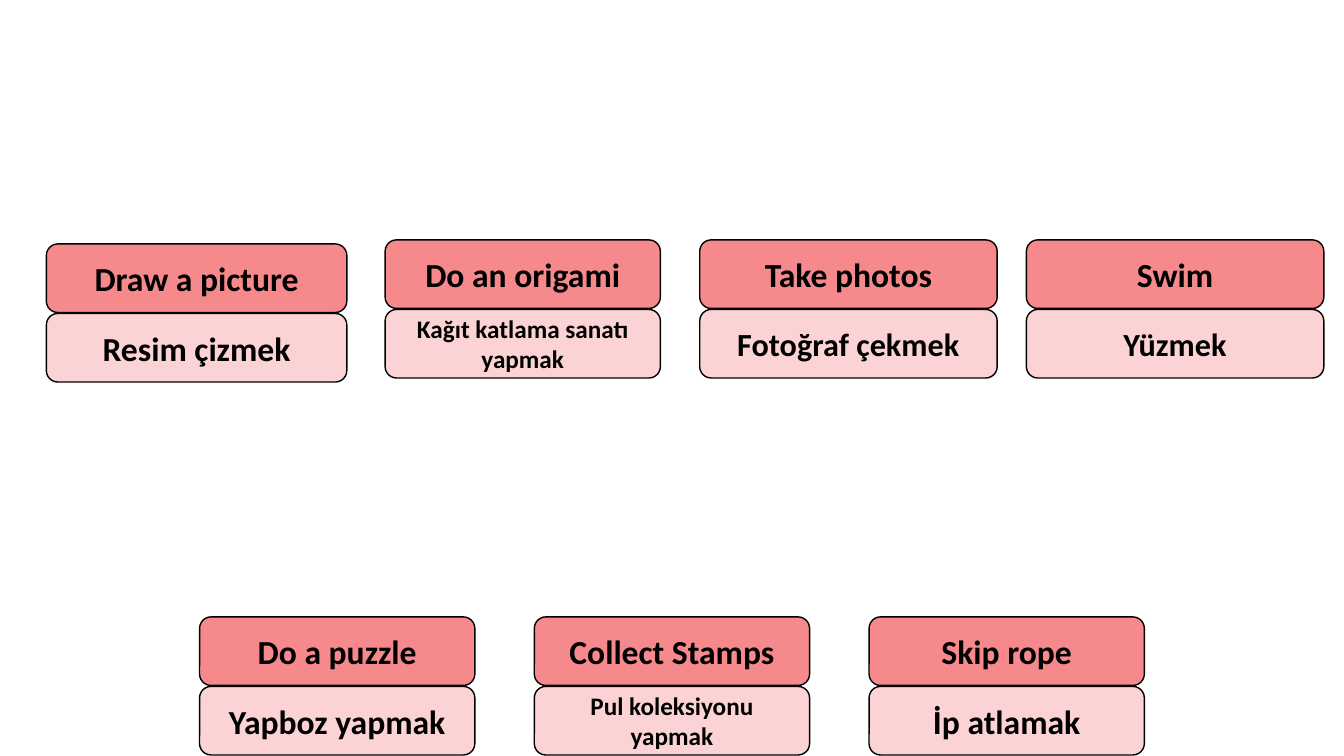
"""Build a slide of hobby cards, each with an English phrase above its Turkish meaning."""
import dataclasses

import pptx
import pptx.dml.color
import pptx.enum.shapes
import pptx.enum.text
import pptx.slide
import pptx.util

Inches = pptx.util.Inches
RGB = pptx.dml.color.RGBColor.from_string

COLORS = {"top": "F5898B", "base": "FCD3D4", "ink": "000000"}
HEIGHT = 0.68
STEP = 0.69
LOW_LEFT, LOW_TOP, LOW_STEP = 1.98, 6.12, 3.32
FONT = {"name": "Calibri", "bold": True}
FRAME = {"word_wrap": True, "vertical_anchor": pptx.enum.text.MSO_ANCHOR.MIDDLE}


@dataclasses.dataclass(frozen=True)
class Card:
    """An English phrase and its meaning, with place and text size."""

    left: float
    top: float
    width: float
    phrase: str
    meaning: str
    size: int = 24


LOWER = [
    ("Do a puzzle", "Yapboz yapmak", 24),
    ("Collect Stamps", "Pul koleksiyonu yapmak", 18),
    ("Skip rope", "İp atlamak", 24),
]
CARDS = [
    Card(0.46, 2.42, 2.98, "Draw a picture", "Resim çizmek"),
    Card(3.82, 2.38, 2.73, "Do an origami", "Kağıt katlama sanatı yapmak", 18),
    Card(6.94, 2.38, 2.95, "Take photos", "Fotoğraf çekmek", 23),
    Card(10.18, 2.38, 2.95, "Swim", "Yüzmek", 23),
] + [
    Card(LOW_LEFT + i * LOW_STEP, LOW_TOP, 2.73, *words)
    for i, words in enumerate(LOWER)
]


def apply(target: object, values: dict) -> None:
    """Set each named value on the target."""
    for name, value in values.items():
        setattr(target, name, value)


def draw_box(slide: pptx.slide.Slide, card: Card, top: float,
             text: str, size: int, fill: str) -> None:
    """Draw one rounded half of a card."""
    box = slide.shapes.add_shape(
        pptx.enum.shapes.MSO_SHAPE.ROUNDED_RECTANGLE,
        Inches(card.left), Inches(top), Inches(card.width), Inches(HEIGHT))
    box.shadow.inherit = False
    box.fill.solid()
    box.fill.fore_color.rgb = RGB(COLORS[fill])
    box.line.color.rgb = RGB(COLORS["ink"])
    box.line.width = pptx.util.Pt(1)
    apply(box.text_frame, FRAME)
    para = box.text_frame.paragraphs[0]
    para.alignment = pptx.enum.text.PP_ALIGN.CENTER
    run = para.add_run()
    run.text = text
    apply(run.font, FONT | {"size": pptx.util.Pt(size)})
    run.font.color.rgb = RGB(COLORS["ink"])


def draw_card(slide: pptx.slide.Slide, card: Card) -> None:
    """Draw the phrase with its meaning below."""
    draw_box(slide, card, card.top, card.phrase, 24, "top")
    draw_box(slide, card, card.top + STEP, card.meaning, card.size, "base")


def main() -> None:
    """Build and save the deck."""
    deck = pptx.Presentation()
    apply(deck, {"slide_width": Inches(13.33), "slide_height": Inches(7.5)})
    slide = deck.slides.add_slide(deck.slide_layouts[6])
    for card in CARDS:
        draw_card(slide, card)
    deck.save("out.pptx")


if __name__ == "__main__":
    main()
